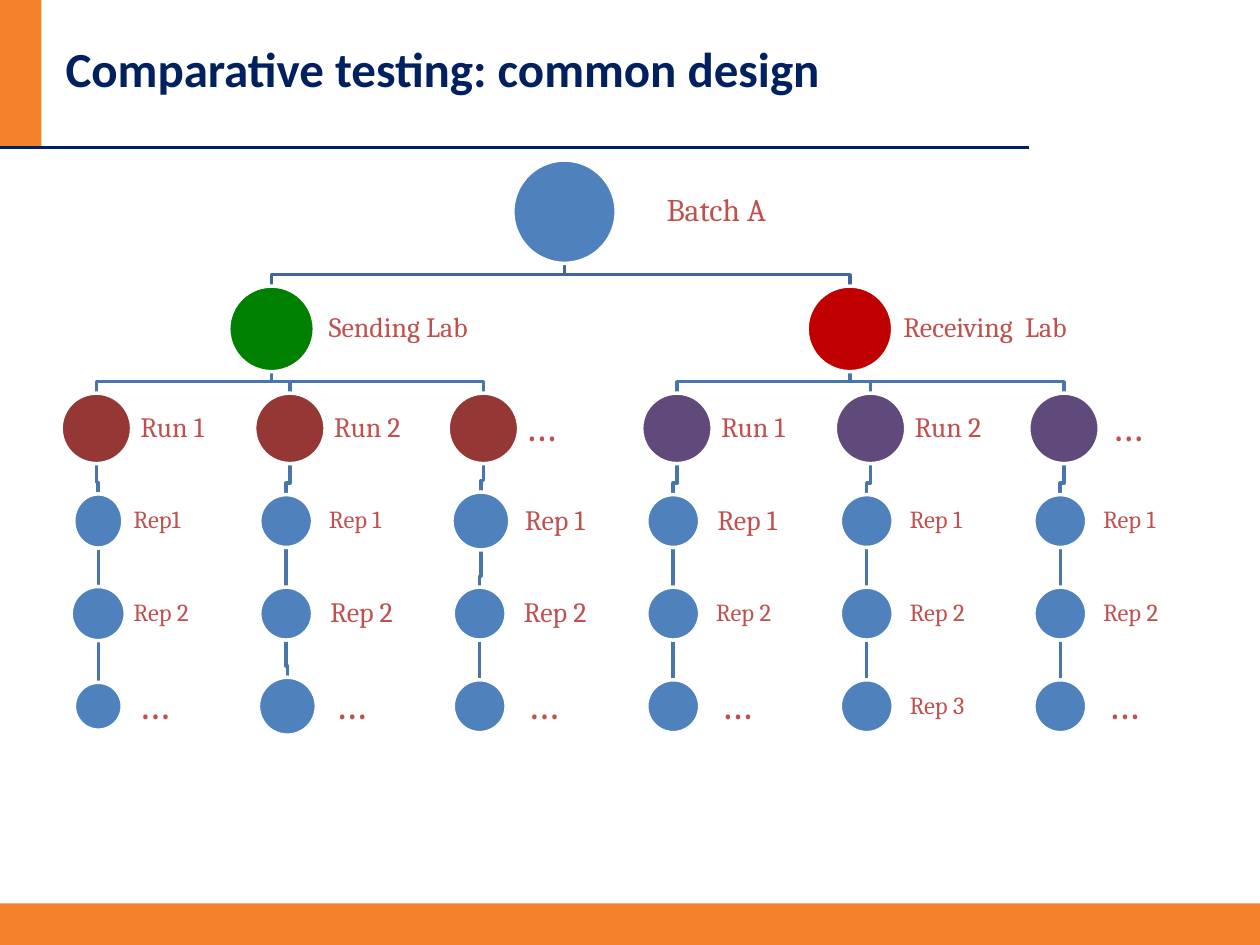
from lxml import etree
from pptx import Presentation
from pptx.dml.color import RGBColor
from pptx.enum.shapes import MSO_CONNECTOR, MSO_SHAPE
from pptx.enum.text import MSO_ANCHOR, MSO_AUTO_SIZE, PP_ALIGN
from pptx.oxml.ns import qn
from pptx.util import Inches, Pt

RECT, OVAL = MSO_SHAPE.RECTANGLE, MSO_SHAPE.OVAL
LINE, MID, FIXED = MSO_CONNECTOR.STRAIGHT, MSO_ANCHOR.MIDDLE, MSO_AUTO_SIZE.NONE
LEFT, FULL = PP_ALIGN.LEFT, PP_ALIGN.JUSTIFY

HEX = {"orange": "F5812A", "navy": "002060", "blue": "4F81BD", "green": "008000",
       "red": "C00000", "maroon": "953735", "purple": "604A7B", "white": "FFFFFF",
       "text": "C0504D", "trunk": "3F6797", "branch": "4875AC"}
COLOR = {name: RGBColor.from_string(code) for name, code in HEX.items()}

deck = Presentation()
deck.slide_width, deck.slide_height = Inches(10), Inches(7.5)
W, H = deck.slide_width, deck.slide_height
slide = deck.slides.add_slide(deck.slide_layouts[5])
shapes = slide.shapes


def write(shape, words, size, font, color, bold, align, inset):
    frame = shape.text_frame
    frame.text = words
    box = {"word_wrap": True, "auto_size": FIXED, "vertical_anchor": MID}
    for side in ("left", "right", "top", "bottom"):
        box["margin_" + side] = Inches(inset)
    para = frame.paragraphs[0]
    face = {"size": Pt(size), "name": font, "bold": bold}
    look = {"alignment": align, "line_spacing": 1 if bold else 0.9}
    for item, form in ((frame, box), (para, look), (para.runs[0].font, face)):
        for key, value in form.items():
            setattr(item, key, value)
    para.runs[0].font.color.rgb = COLOR[color]


def join(points, color, width):
    points = [(Inches(x), Inches(y)) for x, y in points]
    if len(points) == 2:
        line = shapes.add_connector(LINE, *points[0], *points[1])
        etree.SubElement(line._element.spPr, qn("a:effectLst"))
    else:
        draft = shapes.build_freeform(*points[0], scale=1.0)
        draft.add_line_segments(points[1:], close=False)
        line = draft.convert_to_shape()
        line.fill.background()
        line.shadow.inherit = False
    line.line.color.rgb, line.line.width = COLOR[color], Pt(width)


title = shapes.title
place = {"left": Inches(0.42), "top": 0, "width": Inches(7.67), "height": Inches(1.08)}
for key, value in place.items():
    setattr(title, key, value)
write(title, "Comparative testing: common design", 28, "Calibri", "navy", True, LEFT, 0.1)

for top, wide, high in ((0, 0.33, 1.17), (7.17, 10, 0.33)):
    bar = shapes.add_shape(RECT, 0, Inches(top), Inches(wide), Inches(high))
    bar.fill.solid()
    bar.fill.fore_color.rgb = COLOR["orange"]
    bar.line.fill.background()
    bar.shadow.inherit = False
join([(0, 1.17), (8.17, 1.17)], "navy", 1.5)

PITCH, STEP = 1.536, 0.735
RUN_X, REP_X, RUN_Y = 0.765, 0.735, 3.4
GRID = [
    [("Run 1", 16), ("Rep1", 14), ("Rep 2", 14), ("…", 24)],
    [("Run 2", 16), ("Rep 1", 14), ("Rep 2", 16), ("…", 24)],
    [("…", 24), ("Rep 1", 16), ("Rep 2", 16), ("…", 24)],
    [("Run 1", 16), ("Rep 1", 16), ("Rep 2", 14), ("…", 24)],
    [("Run 2", 16), ("Rep 1", 14), ("Rep 2", 14), ("Rep 3", 14)],
    [("…", 24), ("Rep 1", 14), ("Rep 2", 14), ("…", 24)],
]
DISC = {(0, 1): (0.39, 0.43), (0, 2): (0.43, 0.43), (0, 3): (0.38, 0.38),
        (1, 3): (0.46, 0.46), (2, 1): (0.46, 0.46)}
INSET = {14: 0.06, 16: 0.07, 18: 0.07, 24: 0.1}

batch = (4.48, 1.68, 0.82, 0.82, "blue", "Batch A", 18, 0.74, 1.64, LEFT)
labs = [(2.155, 2.61, 0.68, 0.68, "green", "Sending Lab", 16, 0.385, 1.55, FULL),
        (6.745, 2.61, 0.68, 0.68, "red", "Receiving  Lab", 16, 0.355, 1.63, FULL)]
nodes = [batch] + labs
links = [(batch, lab, "trunk") for lab in labs]
for col, cells in enumerate(GRID):
    above = labs[col // 3]
    for row, (words, size) in enumerate(cells):
        y = RUN_Y + row * STEP
        if row == 0:
            x, wide, high = RUN_X + col * PITCH, 0.56, 0.56
            fill = "maroon" if col < 3 else "purple"
            gap = 0.23 if col == 2 else 0.28
        else:
            wide, high = DISC.get((col, row), (0.42, 0.42))
            x = REP_X + col * PITCH + (0.045 if col == 0 else 0.01 if wide == 0.46 else 0)
            fill, gap = "blue", 0.22 if col == 0 else 0.28
        node = (x, y, wide, high, fill, words, size, gap, 0.84, LEFT)
        nodes.append(node)
        links.append((above, node, "branch"))
        above = node

for start, end, color in links:
    x1, y1 = start[0], start[1] + start[3] / 2
    x2, y2 = end[0], end[1] - end[3] / 2
    bend = [] if x1 == x2 else [(x1, y2 - 0.09), (x2, y2 - 0.09)]
    join([(x1, y1), *bend, (x2, y2)], color, 2)

for x, y, wide, high, fill, words, size, gap, span, align in nodes:
    disc = shapes.add_shape(OVAL, Inches(x - wide / 2), Inches(y - high / 2),
                            Inches(wide), Inches(high))
    disc.fill.solid()
    disc.fill.fore_color.rgb = COLOR[fill]
    disc.line.color.rgb, disc.line.width = COLOR["white"], Pt(2)
    disc.shadow.inherit = False
    label = shapes.add_textbox(Inches(x + gap), Inches(y - 0.28), Inches(span), Inches(0.56))
    write(label, words, size, "Cambria", "text", False, align, INSET[size])

deck.save("out.pptx")
